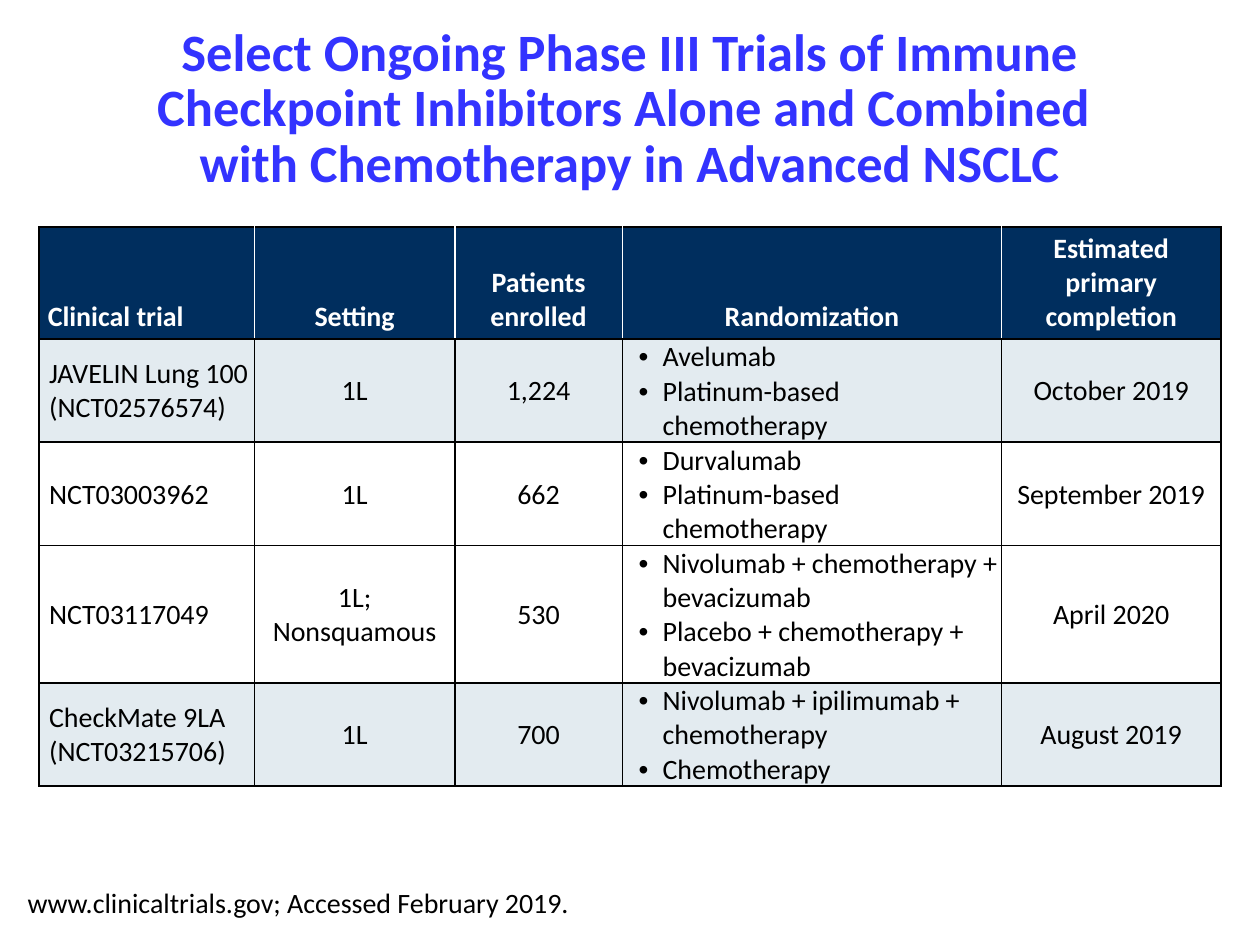
from lxml import etree
from pptx import Presentation
from pptx.dml.color import RGBColor
from pptx.enum.text import MSO_ANCHOR, PP_ALIGN
from pptx.oxml.ns import qn
from pptx.util import Inches, Pt

CENTER, LEFT = PP_ALIGN.CENTER, PP_ALIGN.LEFT
MIDDLE, BOTTOM = MSO_ANCHOR.MIDDLE, MSO_ANCHOR.BOTTOM

BLACK = RGBColor(0x00, 0x00, 0x00)
WHITE = RGBColor(0xFF, 0xFF, 0xFF)
TITLE_BLUE = RGBColor(0x33, 0x33, 0xFF)
NAVY = RGBColor(0x00, 0x2E, 0x5E)
PALE_BLUE = RGBColor(0xE3, 0xEB, 0xF0)

FONT = "Calibri"
TITLE_LINES = [
    "Select Ongoing Phase III Trials of Immune Checkpoint Inhibitors Alone and Combined ",
    "with Chemotherapy in Advanced NSCLC",
]
SOURCE = "www.clinicaltrials.gov; Accessed February 2019."
COLUMN_WIDTHS = [1.71, 1.59, 1.33, 3.01, 1.74]
ROW_HEIGHTS = [0.89, 0.82, 0.82, 1.09, 0.82]
ROW_FILLS = [NAVY, PALE_BLUE, WHITE, WHITE, PALE_BLUE]
TRIAL_COLUMN, RANDOMIZATION_COLUMN = 0, 3
ROWS = [
    [["Clinical trial"], ["Setting"], ["Patients enrolled"], ["Randomization"],
     ["Estimated primary", "completion"]],
    [["JAVELIN Lung 100 (NCT02576574)"], ["1L"], ["1,224"],
     ["Avelumab", "Platinum-based chemotherapy"], ["October 2019"]],
    [["NCT03003962"], ["1L"], ["662"],
     ["Durvalumab", "Platinum-based chemotherapy"], ["September 2019"]],
    [["NCT03117049"], ["1L; Nonsquamous"], ["530"],
     ["Nivolumab + chemotherapy + bevacizumab", "Placebo + chemotherapy + bevacizumab"],
     ["April 2020"]],
    [["CheckMate 9LA (NCT03215706)"], ["1L"], ["700"],
     ["Nivolumab + ipilimumab + chemotherapy", "Chemotherapy"], ["August 2019"]],
]


def set_font(paragraph, size, color, bold=False):
    """Set the font of a whole paragraph."""
    font = paragraph.font
    font.name, font.size, font.bold = FONT, Pt(size), bold
    font.color.rgb = color


def set_indent(paragraph, left, first=0, bullet=None):
    """Indent a paragraph and give it a bullet if one is named."""
    properties = paragraph._p.get_or_add_pPr()
    properties.set("marL", str(Inches(left)))
    properties.set("indent", str(Inches(first)))
    if bullet:
        etree.SubElement(properties, qn("a:buFont"), typeface="Arial")
        etree.SubElement(properties, qn("a:buChar"), char=bullet)


def set_margins(target, left, top, right, bottom):
    """Set the inner margins of a cell or text frame."""
    target.margin_left, target.margin_top = Inches(left), Inches(top)
    target.margin_right, target.margin_bottom = Inches(right), Inches(bottom)


def set_borders(cell, left, right):
    """Draw black borders above and below, and coloured ones at the sides."""
    properties = cell._tc.get_or_add_tcPr()
    for side, color in (("L", left), ("R", right), ("T", BLACK), ("B", BLACK)):
        line = etree.SubElement(properties, qn(f"a:ln{side}"), w=str(Pt(1)))
        fill = etree.SubElement(line, qn("a:solidFill"))
        etree.SubElement(fill, qn("a:srgbClr"), val=str(color))


def add_title(slide):
    """Add the slide title."""
    shape = slide.shapes.add_textbox(Inches(0.75), Inches(0.25), Inches(8.5), Inches(1.25))
    frame = shape.text_frame
    frame.word_wrap = True
    frame.vertical_anchor = MIDDLE
    set_margins(frame, 0, 0, 0, 0)
    paragraph = frame.paragraphs[0]
    paragraph.alignment, paragraph.line_spacing = CENTER, 0.88
    paragraph.add_run().text = TITLE_LINES[0]
    paragraph.add_line_break()
    paragraph.add_run().text = TITLE_LINES[1]
    set_font(paragraph, 30, TITLE_BLUE, bold=True)


def fill_cell(cell, lines, row, column):
    """Write and format one table cell."""
    header = row == 0
    last = len(COLUMN_WIDTHS) - 1
    set_borders(cell,
                WHITE if header and column > 0 else BLACK,
                WHITE if header and column < last else BLACK)
    cell.fill.solid()
    cell.fill.fore_color.rgb = ROW_FILLS[row]
    cell.vertical_anchor = BOTTOM if header else MIDDLE
    set_margins(cell, *((0.07, 0.04, 0.07, 0.04) if header else (0.01, 0.01, 0.01, 0)))
    cell.text_frame.text = "\n".join(lines)
    bulleted = column == RANDOMIZATION_COLUMN and not header
    for paragraph in cell.text_frame.paragraphs:
        paragraph.alignment = LEFT if bulleted or column == TRIAL_COLUMN else CENTER
        if bulleted:
            set_indent(paragraph, 0.31, -0.19, "•")
        elif column == TRIAL_COLUMN and not header:
            set_indent(paragraph, 0.07)
        set_font(paragraph, 16, WHITE if header else BLACK, bold=header)


def add_trial_table(slide):
    """Add the table of clinical trials."""
    table = slide.shapes.add_table(
        len(ROWS), len(COLUMN_WIDTHS), Inches(0.31), Inches(1.8),
        Inches(sum(COLUMN_WIDTHS)), Inches(sum(ROW_HEIGHTS))).table
    table.horz_banding = False
    for column, width in zip(table.columns, COLUMN_WIDTHS):
        column.width = Inches(width)
    for row, height in zip(table.rows, ROW_HEIGHTS):
        row.height = Inches(height)
    for row, cells in enumerate(ROWS):
        for column, lines in enumerate(cells):
            fill_cell(table.cell(row, column), lines, row, column)


def add_source(slide):
    """Add the source line at the foot of the slide."""
    shape = slide.shapes.add_textbox(Inches(0.12), Inches(6.98), Inches(4.55), Inches(0.37))
    shape.text_frame.word_wrap = False
    paragraph = shape.text_frame.paragraphs[0]
    paragraph.text = SOURCE
    set_font(paragraph, 16, BLACK)


def main():
    """Build and save the presentation."""
    presentation = Presentation()
    presentation.slide_width, presentation.slide_height = Inches(10), Inches(7.5)
    slide = presentation.slides.add_slide(presentation.slide_layouts[6])
    add_title(slide)
    add_trial_table(slide)
    add_source(slide)
    presentation.save("out.pptx")


if __name__ == "__main__":
    main()
